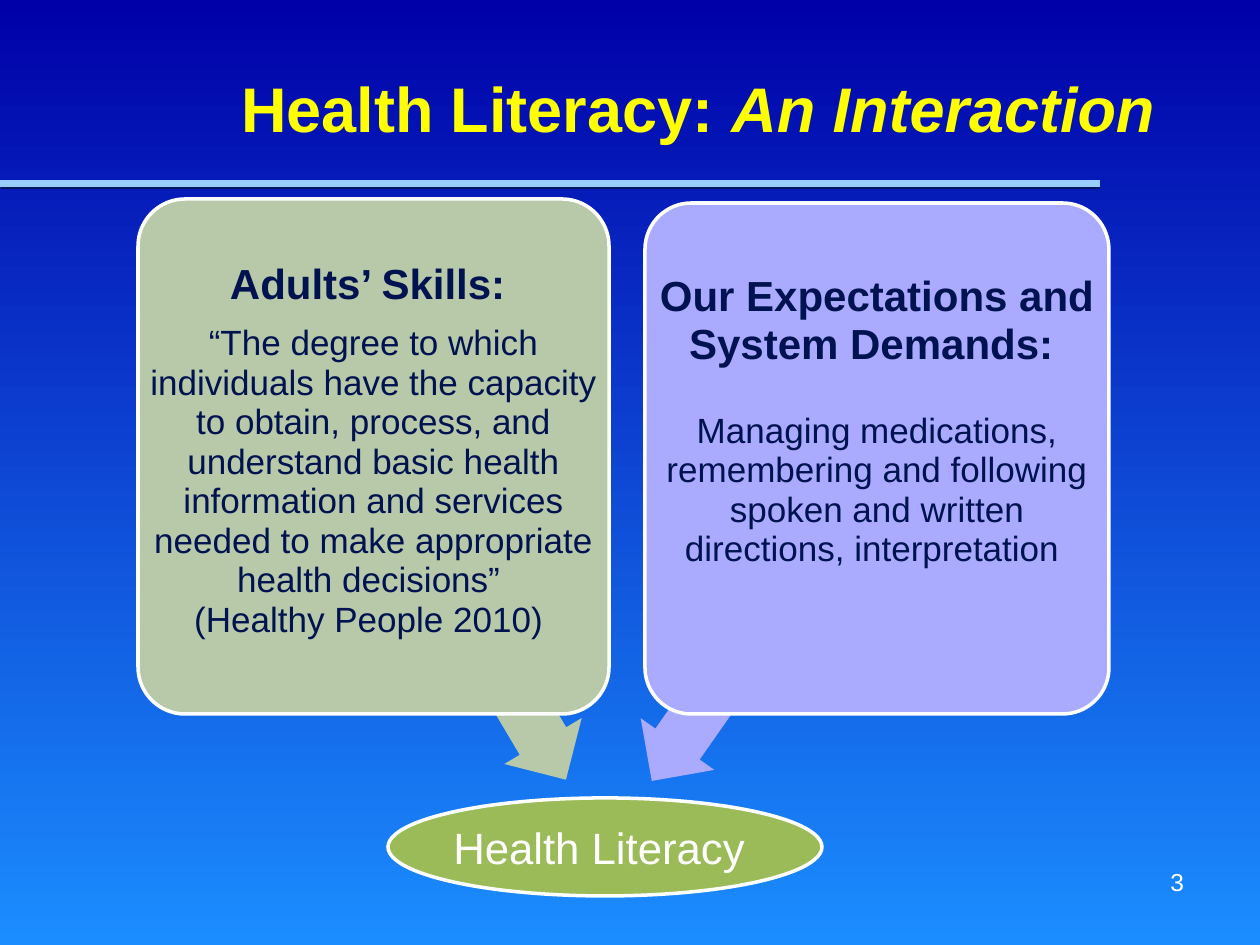
from pptx import Presentation
from pptx.dml.color import RGBColor
from pptx.enum.shapes import MSO_CONNECTOR as Link, MSO_SHAPE as Kind
from pptx.enum.text import MSO_ANCHOR as Anchor, PP_ALIGN as Align
from pptx.oxml.ns import qn
from pptx.util import Pt
from lxml.etree import SubElement

SCALE = 914400 // 126
WHITE, NAVY, YELLOW = "FFFFFF", "001350", "FFFF00"
SAGE, LILAC, GREEN = "B7C9A8", "AAAAFF", "9BBB59"


def px(*nums):
    return [round(n * SCALE) for n in nums]


def tint(code):
    return RGBColor.from_string(code)


def paint(slide, top, base):
    fill = slide.background.fill
    fill.gradient()
    fill.gradient_angle = 270
    for stop, code in zip(fill.gradient_stops, (top, base)):
        stop.color.rgb = tint(code)


def rule(slide, left, right, y, code):
    line = slide.shapes.add_connector(Link.STRAIGHT, *px(left, y, right, y))
    line.line.color.rgb = tint(code)
    line.line.width = Pt(4)
    SubElement(line._element.spPr, qn("a:effectLst"))


def shape(slide, kind, box, code, edge=True, turn=0, adjust=()):
    item = slide.shapes.add_shape(kind, *px(*box))
    item.shadow.inherit = False
    item.fill.solid()
    item.fill.fore_color.rgb = tint(code)
    item.rotation = turn
    for i, value in enumerate(adjust):
        item.adjustments[i] = value
    if edge:
        item.line.color.rgb = tint(WHITE)
        item.line.width = Pt(2)
    else:
        item.line.fill.background()


def frame(slide, box, anchor, pad=(13, 6)):
    text = slide.shapes.add_textbox(*px(*box)).text_frame
    text.word_wrap = True
    text.vertical_anchor = anchor
    side, edge = px(*pad)
    text.margin_left = text.margin_right = side
    text.margin_top = text.margin_bottom = edge
    return text


def style(para, size, code, bold=False, align=Align.CENTER, space=0.94):
    para.alignment = align
    para.line_spacing = space
    font = para.font
    font.name, font.size, font.bold = "Arial", Pt(size), bold
    font.color.rgb = tint(code)


def title(slide, box, plain, slant):
    para = frame(slide, box, Anchor.BOTTOM).paragraphs[0]
    style(para, 36, YELLOW, True, space=0.9)
    para.add_run().text = plain
    run = para.add_run()
    run.text = slant
    run.font.italic = True


def label(slide, box, words, size, align=Align.CENTER, anchor=Anchor.MIDDLE):
    para = frame(slide, box, anchor).paragraphs[0]
    para.text = words
    style(para, size, WHITE, align=align, space=1.0)


def card(slide, box, code, drop, gap, head, body):
    shape(slide, Kind.ROUNDED_RECTANGLE, box, code, adjust=[0.1])
    text = frame(slide, box, Anchor.TOP, (6, drop))
    first, second = text.paragraphs[0], text.add_paragraph()
    first.text, second.text = head, body
    style(first, 24, NAVY, True)
    style(second, 20, NAVY)
    first.space_after = Pt(gap)


def main():
    deck = Presentation()
    deck.slide_width, deck.slide_height = px(1260, 945)
    slide = deck.slides.add_slide(deck.slide_layouts[6])
    paint(slide, "0000A8", "1B8DFF")
    rule(slide, 1, 1100, 186, "001760")
    rule(slide, 0, 1100, 184, "99CCFF")
    title(slide, (199, 31, 998, 121), "Health Literacy: ", "An Interaction")

    oval = (388, 798, 434, 98)
    shape(slide, Kind.OVAL, oval, GREEN)
    label(slide, oval, "Health Literacy ", 25)

    arrow = dict(edge=False, adjust=[0.6, 0.5])
    shape(slide, Kind.LEFT_ARROW, (282, 573, 376, 90), SAGE, turn=239.3, **arrow)
    card(slide, (138, 199, 471, 515), SAGE, 63, 8.5, "Adults’ Skills: ",
         "“The degree to which individuals have the capacity to obtain, "
         "process, and understand basic health information and services "
         "needed to make appropriate health decisions” \n"
         "(Healthy People 2010) ")
    shape(slide, Kind.LEFT_ARROW, (568, 575, 393, 90), LILAC, turn=305, **arrow)
    card(slide, (645, 203, 464, 511), LILAC, 71, 24.5,
         "Our Expectations and System Demands: ",
         "Managing medications, remembering and following spoken and "
         "written directions, interpretation ")
    label(slide, (903, 861, 294, 65), "3", 14, Align.RIGHT, Anchor.TOP)
    deck.save("out.pptx")


if __name__ == "__main__":
    main()
